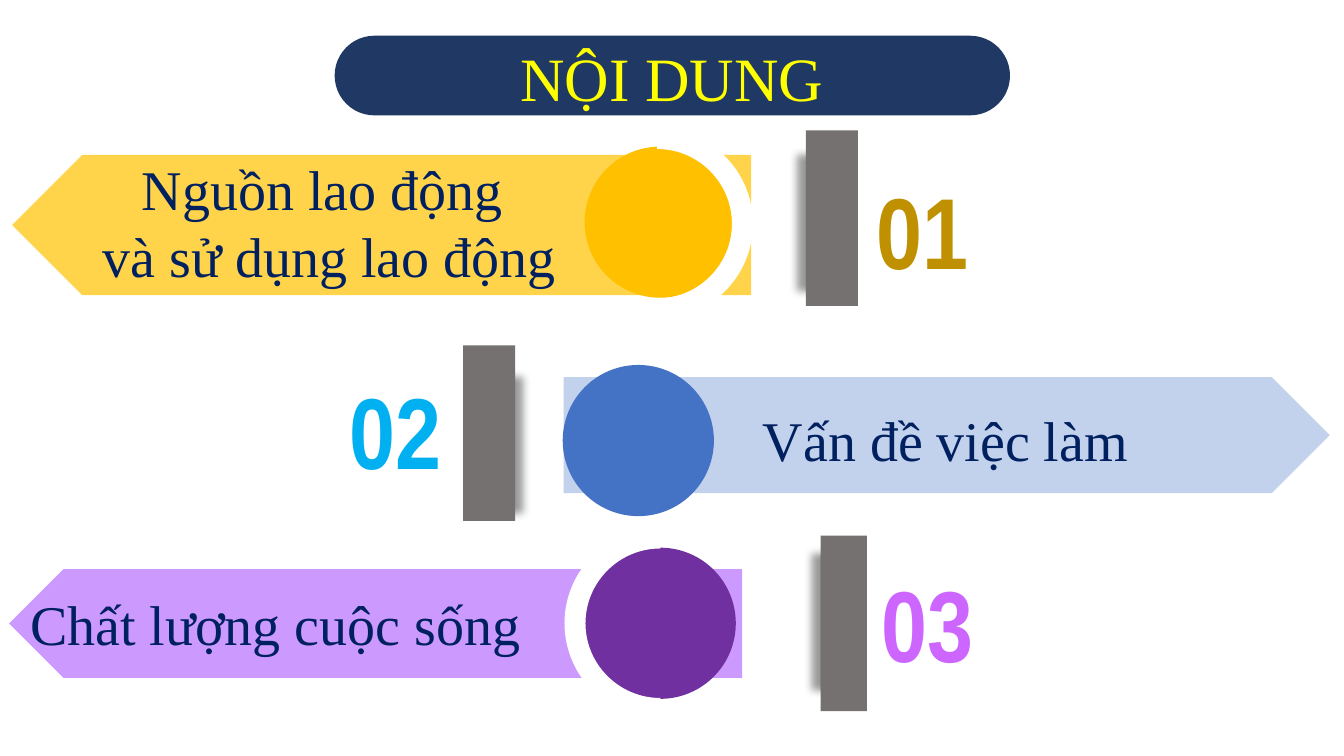
from lxml.etree import Element, SubElement
from pptx import Presentation
from pptx.dml.color import RGBColor
from pptx.enum.shapes import MSO_SHAPE
from pptx.enum.text import MSO_AUTO_SIZE, PP_ALIGN
from pptx.oxml.ns import qn
from pptx.util import Inches, Pt

WIDTH, HEIGHT = Inches(13.333), Inches(7.5)
COLS, ROWS = 160, 90
CIRCLE, RING_OUTER, RING_INNER = 18, 11.4, 8.9
BAR_HEIGHT, SHADOW_HEIGHT = 20.9, 16.2
ARC_HANDLE = 0.55

NAVY = RGBColor(0x20, 0x38, 0x64)
INK = RGBColor(0x00, 0x20, 0x60)
YELLOW = RGBColor(0xFF, 0xFF, 0x00)
WHITE = RGBColor(0xFF, 0xFF, 0xFF)
GREY = RGBColor(0x76, 0x71, 0x71)
GOLD = RGBColor(0xFF, 0xC0, 0x00)
GOLD_LIGHT = RGBColor(0xFF, 0xD4, 0x4B)
GOLD_DARK = RGBColor(0xBF, 0x90, 0x00)
BLUE = RGBColor(0x44, 0x72, 0xC4)
BLUE_LIGHT = RGBColor(0xC2, 0xD1, 0xEC)
SKY = RGBColor(0x00, 0xB0, 0xF0)
PURPLE = RGBColor(0x70, 0x30, 0xA0)
PURPLE_LIGHT = RGBColor(0xCC, 0x99, 0xFF)
ORCHID = RGBColor(0xCC, 0x66, 0xFF)

SECTIONS = [
    dict(lines=["Nguồn lao động ", "và sử dụng lao động"], align=PP_ALIGN.CENTER,
         plate=(1.44, 18.45, 88, 16.68), label=(4.32, 17.76, 69.72, 17.76), left=True,
         circle=(69.6, 17.45), ring=(78.24, 26.64, 1),
         bar=(95.93, 15.53, 6.2), shadow=(95.93, 18.48, 2.8),
         number="01", number_at=(103.2, 19.5), colors=(GOLD_LIGHT, GOLD, GOLD_DARK)),
    dict(lines=["Vấn đề việc làm"], align=PP_ALIGN.LEFT,
         plate=(67.1, 44.9, 91.2, 13.8), label=(89.64, 47.68, 49.8, 9.24), left=False,
         circle=(67, 43.45), ring=None,
         bar=(55.15, 41.12, 6.2), shadow=(58.44, 44.88, 2.8),
         number="02", number_at=(40.4, 43.3), colors=(BLUE_LIGHT, BLUE, SKY)),
    dict(lines=["Chất lượng cuộc sống"], align=PP_ALIGN.LEFT,
         plate=(1.1, 67.75, 87.24, 12.96), label=(2.4, 69.6, 75.48, 9.24), left=True,
         circle=(69.6, 65.2), ring=(78.6, 74.2, -1),
         bar=(97.7, 63.76, 5.52), shadow=(97.7, 66, 5.16),
         number="03", number_at=(103.8, 66.26), colors=(PURPLE_LIGHT, PURPLE, ORCHID)),
]


def col(n):
    """Return the length of n grid columns."""
    return round(WIDTH * n / COLS)


def row(n):
    """Return the length of n grid rows."""
    return round(HEIGHT * n / ROWS)


def place(x, y, w, h):
    """Return a grid box as slide lengths."""
    return col(x), row(y), col(w), row(h)


def paint(sp, color):
    """Give a shape a plain fill with no line or shadow."""
    sp.shadow.inherit = False
    sp.fill.solid()
    sp.fill.fore_color.rgb = color
    sp.line.fill.background()
    return sp


def add_block(s, kind, box, color, flip=False):
    """Add a plain preset shape."""
    sp = paint(s.shapes.add_shape(kind, *place(*box)), color)
    if flip:
        sp._element.spPr.find(qn("a:xfrm")).set("flipH", "1")
    return sp


def add_text(s, lines, box, *, size, color, font="Times New Roman",
             bold=False, align=PP_ALIGN.LEFT):
    """Add a text box with one paragraph per line."""
    tf = s.shapes.add_textbox(*place(*box)).text_frame
    tf.word_wrap = True
    tf.auto_size = MSO_AUTO_SIZE.SHAPE_TO_FIT_TEXT
    for i, line in enumerate(lines):
        p = tf.add_paragraph() if i else tf.paragraphs[0]
        p.alignment = align
        r = p.add_run()
        r.text = line
        r.font.name = font
        r.font.size = Pt(size)
        r.font.bold = bold
        r.font.color.rgb = color


def cast_shadow(sp, degrees):
    """Cast a soft black shadow in the given direction."""
    effects = sp._element.spPr.find(qn("a:effectLst"))
    shadow = SubElement(effects, qn("a:outerShdw"), blurRad=str(Pt(6)),
                        dist=str(Pt(6)), dir=str(degrees * 60000),
                        algn="ctr", rotWithShape="0")
    black = SubElement(shadow, qn("a:srgbClr"), val="000000")
    SubElement(black, qn("a:alpha"), val="40000")


def half_circle(radius):
    """Return the Bezier points of a half circle from top to bottom."""
    h = radius * ARC_HANDLE
    return [(0, -radius), (h, -radius), (radius, -h), (radius, 0),
            (radius, h), (h, radius), (0, radius)]


def bend(sp, starts):
    """Turn three straight segments from each start into one curve."""
    outline = next(sp._element.iter(qn("a:path")))
    segments = outline.findall(qn("a:lnTo"))
    for start in starts:
        curve = Element(qn("a:cubicBezTo"))
        segments[start].addprevious(curve)
        for segment in segments[start:start + 3]:
            curve.append(segment[0])
            outline.remove(segment)


def add_half_ring(s, x, y, side):
    """Add a white half ring that bulges towards the given side."""
    outer = half_circle(RING_OUTER)
    offsets = [outer[0], *half_circle(RING_INNER), *reversed(outer)]
    points = [(col(x + side * dx), row(y + dy)) for dx, dy in offsets]
    builder = s.shapes.build_freeform(*points[0])
    builder.add_line_segments(points[1:], close=True)
    sp = paint(builder.convert_to_shape(), WHITE)
    bend(sp, (1, 4, 8, 11))


def add_section(s, lines, align, plate, label, left, circle, ring, bar, shadow,
                number, number_at, colors):
    """Add one arrow with its circle, bar and number."""
    plate_color, circle_color, number_color = colors
    add_block(s, MSO_SHAPE.PENTAGON, plate, plate_color, flip=left)
    add_text(s, lines, label, size=40, color=INK, align=align)
    strip = add_block(s, MSO_SHAPE.RECTANGLE, (*shadow, SHADOW_HEIGHT), GREY)
    cast_shadow(strip, 180 if left else 0)
    add_block(s, MSO_SHAPE.RECTANGLE, (*bar, BAR_HEIGHT), GREY)
    add_block(s, MSO_SHAPE.OVAL, (*circle, CIRCLE, CIRCLE), circle_color, flip=not left)
    add_text(s, [number], (*number_at, 21.5, 15.7), size=72, color=number_color,
             font="Arial Narrow", bold=True)
    if ring:
        add_half_ring(s, *ring)


def main():
    """Build the contents slide."""
    prs = Presentation()
    prs.slide_width, prs.slide_height = WIDTH, HEIGHT
    s = prs.slides.add_slide(prs.slide_layouts[6])
    pill = add_block(s, MSO_SHAPE.ROUNDED_RECTANGLE, (39.84, 4.25, 80.4, 9.48), NAVY)
    pill.adjustments[0] = 0.5
    add_text(s, ["NỘI DUNG"], (51.36, 4.15, 57.24, 10.1), size=44, color=YELLOW,
             align=PP_ALIGN.CENTER)
    for section in SECTIONS:
        add_section(s, **section)
    prs.save("out.pptx")


if __name__ == "__main__":
    main()
